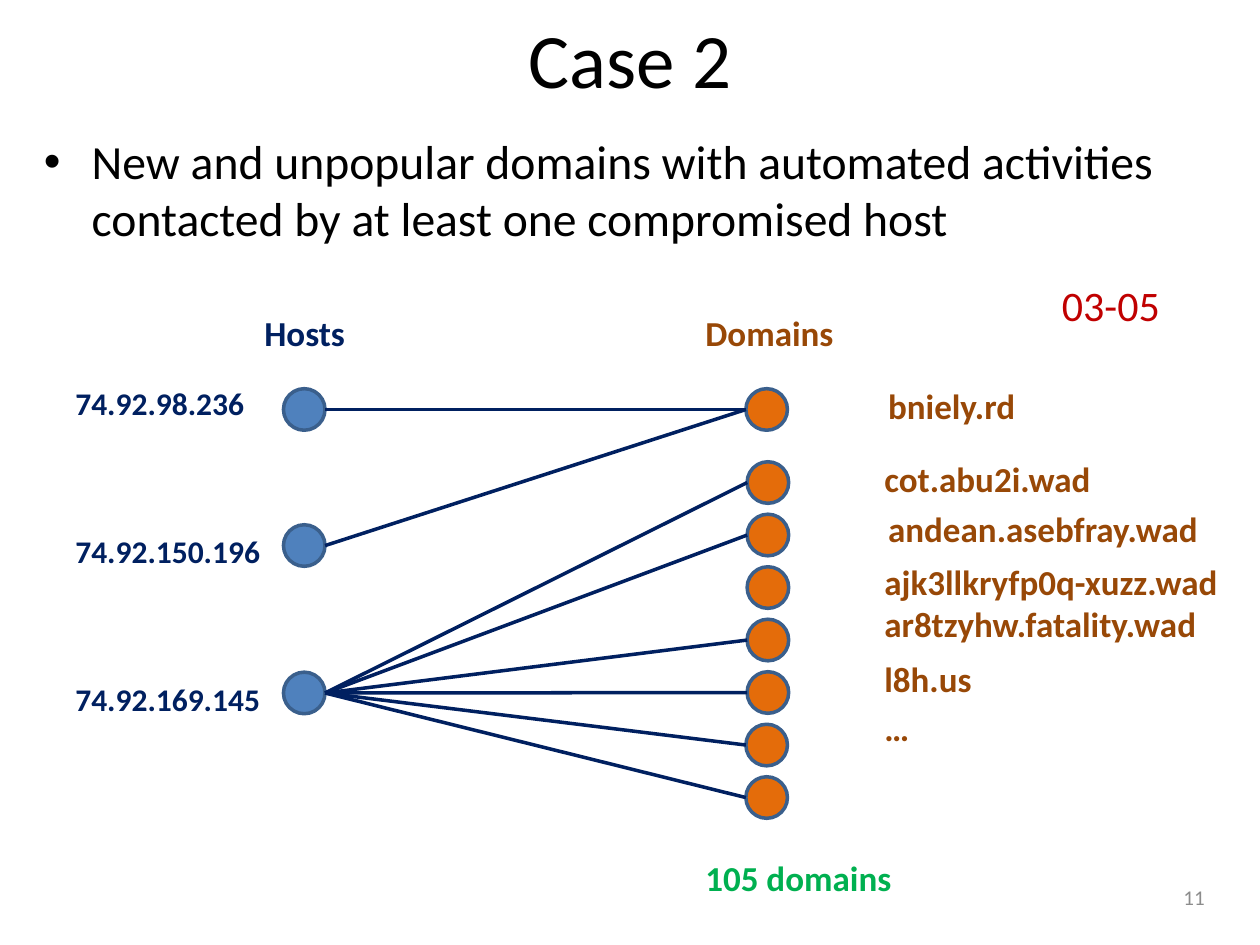
from lxml import etree
from pptx import Presentation
from pptx.dml.color import RGBColor
from pptx.enum.shapes import MSO_CONNECTOR, MSO_SHAPE
from pptx.enum.text import MSO_ANCHOR as Anchor, MSO_AUTO_SIZE as AutoSize, PP_ALIGN as Align
from pptx.oxml.ns import qn
from pptx.util import Inches, Pt

FONT = "Calibri"
BLACK = RGBColor(0x00, 0x00, 0x00)
NAVY = RGBColor(0x00, 0x20, 0x60)
BROWN = RGBColor(0x98, 0x48, 0x07)
BLUE = RGBColor(0x4F, 0x81, 0xBD)
ORANGE = RGBColor(0xE4, 0x6C, 0x0A)
OUTLINE = RGBColor(0x3A, 0x5F, 0x8C)
RED = RGBColor(0xC0, 0x00, 0x00)
GREEN = RGBColor(0x00, 0xB0, 0x50)
GRAY = RGBColor(0x8C, 0x8C, 0x8C)

NODE = 0.33
HOST_X = 2.25
FIRST_Y, DOMAIN_Y, DOMAIN_STEP = 3.25, 3.83, 2.5 / 6

# Host address, top of its label, centre of its node
HOSTS = [
    ("74.92.98.236", 3, FIRST_Y),
    ("74.92.150.196", 4.17, 4.33),
    ("74.92.169.145", 5.35, 5.5),
]
# Domain name and the box of its label
DOMAIN_LABELS = [
    ("bniely.rd", (6.95, 3, 1.22, 0.44)),
    ("cot.abu2i.wad", (6.92, 3.58, 1.85, 0.44)),
    ("andean.asebfray.wad", (6.95, 3.98, 2.68, 0.44)),
    ("ajk3llkryfp0q-xuzz.wad", (6.92, 4.4, 2.88, 0.44)),
    ("ar8tzyhw.fatality.wad", (6.92, 4.73, 2.7, 0.44)),
    ("l8h.us", (6.92, 5.17, 0.9, 0.44)),
    ("…", (6.92, 5.56, 0.4, 0.44)),
]
DOMAIN_LEFTS = [5.92, 5.93, 5.93, 5.93, 5.93, 5.93, 5.92, 5.92]
# Domains contacted by each host, by index
CONTACTS = [[0], [0], [1, 2, 4, 5, 6, 7]]


def add_text(slide, text, box, size, color, bold=False, align=Align.LEFT,
             anchor=Anchor.TOP, wrap=True, grow=False, bullet_indent=None):
    frame = slide.shapes.add_textbox(*map(Inches, box)).text_frame
    frame.word_wrap = wrap
    frame.auto_size = AutoSize.SHAPE_TO_FIT_TEXT if grow else AutoSize.NONE
    frame.vertical_anchor = anchor
    paragraph = frame.paragraphs[0]
    paragraph.alignment = align
    run = paragraph.add_run()
    run.text = text
    run.font.name, run.font.size, run.font.bold = FONT, Pt(size), bold
    run.font.color.rgb = color
    if bullet_indent:
        props = paragraph._p.get_or_add_pPr()
        props.set("marL", str(Inches(bullet_indent)))
        props.set("indent", str(-Inches(bullet_indent)))
        etree.SubElement(props, qn("a:buFont")).set("typeface", "Arial")
        etree.SubElement(props, qn("a:buChar")).set("char", "•")


def add_node(slide, left, center_y, color):
    node = slide.shapes.add_shape(
        MSO_SHAPE.OVAL, *map(Inches, (left, center_y - NODE / 2, NODE, NODE)))
    node.shadow.inherit = False
    node.fill.solid()
    node.fill.fore_color.rgb = color
    node.line.color.rgb = OUTLINE
    node.line.width = Pt(2)


def add_contact(slide, start, end):
    contact = slide.shapes.add_connector(
        MSO_CONNECTOR.STRAIGHT, *map(Inches, (*start, *end)))
    contact.line.color.rgb = NAVY
    contact.line.width = Pt(2)
    etree.SubElement(contact._element.spPr, qn("a:effectLst"))


def add_hosts(slide):
    add_text(slide, "Hosts", (2, 2.42, 1.33, 0.44), 20, NAVY, bold=True, grow=True)
    for address, label_top, center_y in HOSTS:
        add_node(slide, HOST_X, center_y, BLUE)
        add_text(slide, address, (0.5, label_top, 1.67, 0.4), 18, NAVY,
                 bold=True, grow=True)


def add_domains(slide, centers):
    add_text(slide, "Domains", (5.5, 2.42, 1.33, 0.44), 20, BROWN, bold=True, grow=True)
    for left, center_y in centers:
        add_node(slide, left, center_y, ORANGE)
    for name, box in DOMAIN_LABELS:
        add_text(slide, name, box, 20, BROWN, bold=True, wrap=False, grow=True)
    add_text(slide, "105 domains", (5.5, 6.75, 1.75, 0.44), 20, GREEN,
             bold=True, grow=True)


def add_contacts(slide, domains):
    for (_, _, host_y), contacted in zip(HOSTS, CONTACTS):
        for index in contacted:
            add_contact(slide, (HOST_X + NODE, host_y), domains[index])


def add_heading(slide):
    add_text(slide, "Case 2", (0.5, -0.17, 9, 1.25), 44, BLACK,
             align=Align.CENTER, anchor=Anchor.MIDDLE)
    add_text(slide, "New and unpopular domains with automated activities "
             "contacted by at least one compromised host",
             (0.25, 1, 9.5, 0.92), 27.2, BLACK, bullet_indent=0.38)
    add_text(slide, "03-05", (8.33, 2.17, 1.04, 0.5), 24, RED, grow=True)


def main():
    deck = Presentation()
    deck.slide_width, deck.slide_height = Inches(10), Inches(7.5)
    slide = deck.slides.add_slide(deck.slide_layouts[6])

    # Title, statement and date
    add_heading(slide)

    # Graph of hosts and the domains they contact
    center_ys = [FIRST_Y] + [DOMAIN_Y + i * DOMAIN_STEP for i in range(7)]
    domains = list(zip(DOMAIN_LEFTS, center_ys))
    add_hosts(slide)
    add_domains(slide, domains)
    add_contacts(slide, domains)

    # Slide number
    add_text(slide, "11", (7.33, 6.92, 2.33, 0.4), 12, GRAY,
             align=Align.RIGHT, anchor=Anchor.MIDDLE)
    deck.save("out.pptx")


if __name__ == "__main__":
    main()
